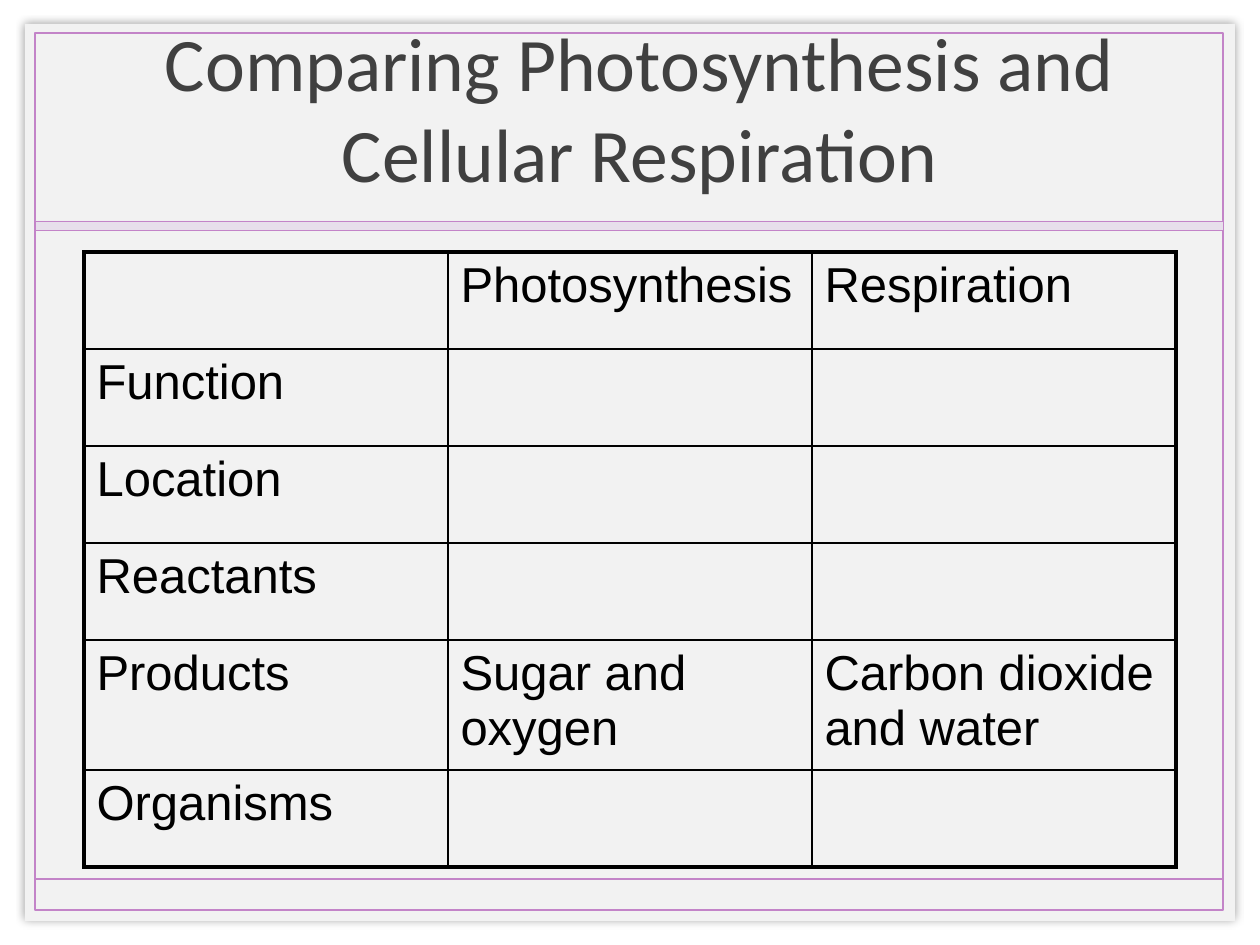
import pptx
import pptx.dml.color
import pptx.enum.shapes
import pptx.enum.text
import pptx.oxml
import pptx.oxml.ns
import pptx.util

PX = 914400 / 126  # EMU per px
THEME = {
    "paper": "F2F2F2", "frame": "C384C8", "band": "E7DFEB",
    "title": "404040", "ink": "000000",
    "title_font": "Calibri", "title_size": 43.2,
    "body_font": "Arial", "body_size": 28,
    "thin": 1, "thick": 2.25, "hairline": 0.25,
}
RGB = pptx.dml.color.RGBColor.from_string
NS = pptx.oxml.ns.nsdecls("a")


def px(*values):
    return [pptx.util.Emu(round(v * PX)) for v in values]


def add_rect(s, box, fill=None, line=None, width=1):
    sp = s.shapes.add_shape(pptx.enum.shapes.MSO_SHAPE.RECTANGLE, *px(*box))
    sp.shadow.inherit = False
    if fill:
        sp.fill.solid()
        sp.fill.fore_color.rgb = RGB(THEME[fill])
    else:
        sp.fill.background()
    if line:
        sp.line.color.rgb = RGB(THEME[line])
        sp.line.width = pptx.util.Pt(width)
    else:
        sp.line.fill.background()
    return sp


prs = pptx.Presentation()
prs.slide_width, prs.slide_height = px(1260, 945)
s = prs.slides.add_slide(prs.slide_layouts[6])

# Paper with a soft shadow
paper = add_rect(s, (25, 24, 1210, 897), fill="paper")
effects = paper._element.spPr.find(pptx.oxml.ns.qn("a:effectLst"))
effects.append(pptx.oxml.parse_xml(
    f'<a:outerShdw {NS} blurRad="63500" dist="0" dir="0" algn="ctr" rotWithShape="0">'
    '<a:srgbClr val="000000"><a:alpha val="40000"/></a:srgbClr></a:outerShdw>'))

# Frame, footer rule and band under the title
add_rect(s, (35, 33, 1188, 877), line="frame", width=THEME["thin"])
rule = s.shapes.add_connector(
    pptx.enum.shapes.MSO_CONNECTOR.STRAIGHT, *px(35, 879, 1223, 879))
rule.line.color.rgb = RGB(THEME["frame"])
rule.line.width = pptx.util.Pt(THEME["thin"])
rule._element.spPr.append(pptx.oxml.parse_xml(f"<a:effectLst {NS}/>"))
add_rect(s, (35, 221, 1188, 9), fill="band", line="frame", width=THEME["hairline"])

# Comparison table
ROWS = [
    ("", "Photosynthesis", "Respiration"),
    ("Function", "", ""),
    ("Location", "", ""),
    ("Reactants", "", ""),
    ("Products", "Sugar and oxygen", "Carbon dioxide and water"),
    ("Organisms", "", ""),
]
HEIGHTS = [97, 97, 97, 97, 130, 97]
COL_WIDTH = 364
last_row, last_col = len(ROWS) - 1, len(ROWS[0]) - 1
frame = s.shapes.add_table(
    len(ROWS), len(ROWS[0]), *px(84, 252, COL_WIDTH * len(ROWS[0]), sum(HEIGHTS)))
table = frame.table
table.first_row = table.horz_banding = False
for col in table.columns:
    col.width = px(COL_WIDTH)[0]
for i, texts in enumerate(ROWS):
    table.rows[i].height = px(HEIGHTS[i])[0]
    for j, text in enumerate(texts):
        cell = table.cell(i, j)
        cell.fill.background()
        cell.text = text
        p = cell.text_frame.paragraphs[0]
        p.font.name = THEME["body_font"]
        p.font.size = pptx.util.Pt(THEME["body_size"])
        p.font.color.rgb = RGB(THEME["ink"])

        # Thick borders on the outside, thin ones inside
        outer = {"L": j == 0, "R": j == last_col, "T": i == 0, "B": i == last_row}
        tc_pr = cell._tc.get_or_add_tcPr()
        for k, (side, is_outer) in enumerate(outer.items()):
            width = pptx.util.Pt(THEME["thick" if is_outer else "thin"])
            tc_pr.insert(k, pptx.oxml.parse_xml(
                f'<a:ln{side} {NS} w="{width}"><a:solidFill>'
                f'<a:srgbClr val="{THEME["ink"]}"/></a:solidFill></a:ln{side}>'))

# Title
title = s.shapes.add_textbox(*px(44, 8, 1191, 198))
tf = title.text_frame
tf.word_wrap = True
tf.vertical_anchor = pptx.enum.text.MSO_ANCHOR.MIDDLE
p = tf.paragraphs[0]
p.text = "Comparing Photosynthesis and Cellular Respiration"
p.alignment = pptx.enum.text.PP_ALIGN.CENTER
p.font.name = THEME["title_font"]
p.font.size = pptx.util.Pt(THEME["title_size"])
p.font.color.rgb = RGB(THEME["title"])

prs.save("out.pptx")
